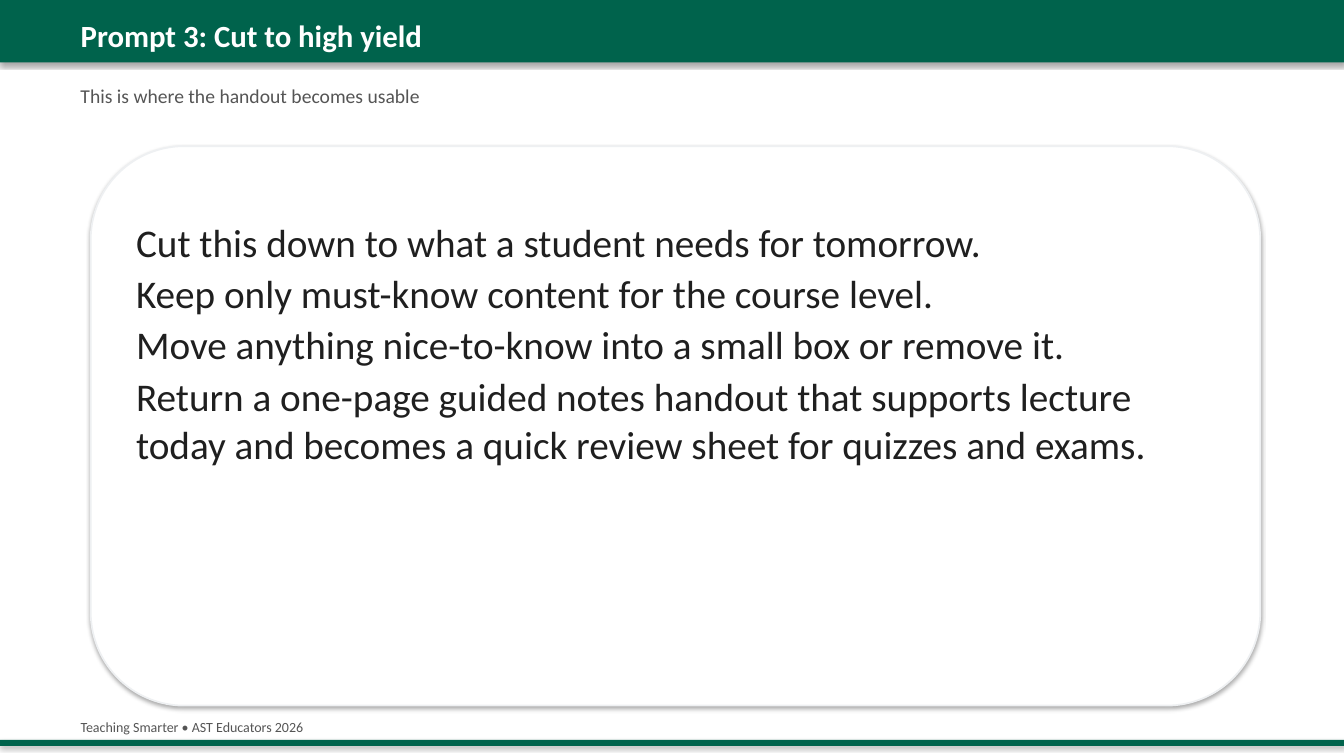
"""Build the "Cut to high yield" prompt slide."""
from lxml import etree
from pptx import Presentation
from pptx.dml.color import RGBColor
from pptx.enum.shapes import MSO_SHAPE
from pptx.enum.text import MSO_ANCHOR, MSO_AUTO_SIZE, PP_ALIGN
from pptx.oxml.ns import qn
from pptx.util import Inches, Pt

RECT, ROUNDED = MSO_SHAPE.RECTANGLE, MSO_SHAPE.ROUNDED_RECTANGLE
TOP, LEFT, FIT = MSO_ANCHOR.TOP, PP_ALIGN.LEFT, MSO_AUTO_SIZE.SHAPE_TO_FIT_TEXT

TITLE = "Prompt 3: Cut to high yield"
SUBTITLE = "This is where the handout becomes usable"
FOOTER = "Teaching Smarter • AST Educators 2026"
PROMPT = [
    "Cut this down to what a student needs for tomorrow.",
    "Keep only must-know content for the course level.",
    "Move anything nice-to-know into a small box or remove it.",
    "Return a one-page guided notes handout that supports lecture today "
    "and becomes a quick review sheet for quizzes and exams.",
]
GREEN, WHITE, GREY, INK, EDGE = "00634C", "FFFFFF", "555555", "1F1F1F", "EEF0F2"
WIDTH, HEIGHT, MARGIN = 13.33, 7.5, 0.7


def color(value):
    return RGBColor.from_string(value)


def add_panel(s, kind, box, fill, line=None):
    sp = s.shapes.add_shape(kind, *map(Inches, box))
    sp.fill.solid()
    sp.fill.fore_color.rgb = color(fill)
    if line:
        sp.line.color.rgb = color(line)
        sp.line.width = Pt(1.25)
    else:
        sp.line.fill.background()
    return sp


def write(sp, box, lines, size, ink, bold=False, wrap=False):
    sp.left, sp.top, sp.width, sp.height = map(Inches, box)
    tf = sp.text_frame
    tf.text = "\n".join(lines)
    tf.word_wrap, tf.auto_size, tf.vertical_anchor = wrap, FIT, TOP
    for p in tf.paragraphs:
        p.alignment, p.space_before = LEFT, Pt(0)
        p.font.name, p.font.size, p.font.bold = "Calibri", Pt(size), bold
        p.font.color.rgb = color(ink)


def bring_to_front(sp):
    sp.element.getparent().append(sp.element)


prs = Presentation()
prs.slide_width, prs.slide_height = Inches(WIDTH), Inches(HEIGHT)
s = prs.slides.add_slide(prs.slide_layouts[1])
title, body = s.placeholders

add_panel(s, RECT, (0, 0, WIDTH, 0.62), GREEN)
write(title, (MARGIN, 0.12, 3.7, 0.47), [TITLE], 22, WHITE, bold=True, wrap=True)
bring_to_front(title)

subtitle = s.shapes.add_textbox(0, 0, 0, 0)
write(subtitle, (MARGIN, 0.78, 3.57, 0.33), [SUBTITLE], 14, GREY)

add_panel(s, RECT, (0, 7.34, WIDTH, 0.06), GREEN)
footer = s.shapes.add_textbox(0, 0, 0, 0)
write(footer, (MARGIN, 7.08, 2.41, 0.27), [FOOTER], 10, GREY)

card = add_panel(s, ROUNDED, (0.9, 1.45, 11.6, 5.55), WHITE, EDGE)
card.adjustments[0] = 0.167
write(body, (1.25, 2.1, 10.9, 2.11), PROMPT, 28, INK, wrap=True)
for p in body.text_frame.paragraphs:
    p.line_spacing, p.space_after = 1.03, Pt(2)
    pPr = p._p.get_or_add_pPr()
    pPr.set("marL", "0")
    pPr.set("indent", "0")
    pPr.find(qn("a:defRPr")).addprevious(etree.Element(qn("a:buNone")))
bring_to_front(body)

prs.save("out.pptx")
